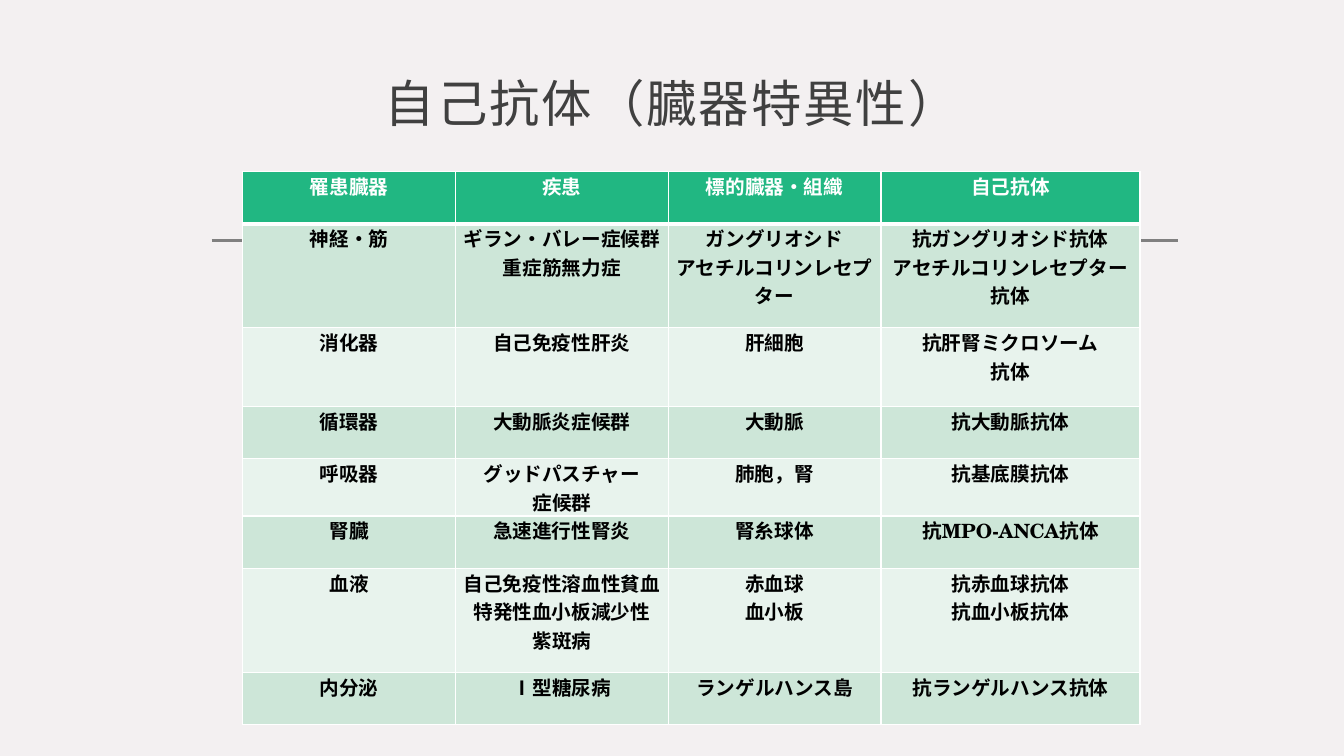
import dataclasses

import lxml.etree
import pptx
import pptx.dml.color
import pptx.enum.shapes
import pptx.enum.text
import pptx.oxml.ns
import pptx.util

Cm = pptx.util.Cm
Pt = pptx.util.Pt
qn = pptx.oxml.ns.qn


@dataclasses.dataclass(frozen=True)
class Theme:
    """Colours, fonts and type sizes of the slide."""
    background: str = "F3F0F1"
    rule: str = "808080"
    title: str = "404040"
    header: str = "21B782"
    bands: tuple = ("CDE6D8", "E8F3ED")
    white: str = "FFFFFF"
    body: str = "000000"
    japanese: str = "Noto Sans CJK JP"
    latin: str = "TeX Gyre Schola"
    title_size: int = 36
    table_size: int = 14


THEME = Theme()

COLUMN_WIDTHS = (5.36, 5.36, 5.36, 6.53)
ROW_HEIGHTS = (1.32, 2.62, 1.98, 1.32, 1.32, 1.32, 2.62, 1.32)
ANTIBODIES = (
    ("罹患臓器", "疾患", "標的臓器・組織", "自己抗体"),
    ("神経・筋", "ギラン・バレー症候群\n重症筋無力症",
     "ガングリオシド\nアセチルコリンレセプター",
     "抗ガングリオシド抗体\nアセチルコリンレセプター抗体"),
    ("消化器", "自己免疫性肝炎", "肝細胞", "抗肝腎ミクロソーム\n抗体"),
    ("循環器", "大動脈炎症候群", "大動脈", "抗大動脈抗体"),
    ("呼吸器", "グッドパスチャー\n症候群", "肺胞，腎", "抗基底膜抗体"),
    ("腎臓", "急速進行性腎炎", "腎糸球体", "抗MPO-ANCA抗体"),
    ("血液", "自己免疫性溶血性貧血\n特発性血小板減少性\n紫斑病",
     "赤血球\n血小板", "抗赤血球抗体\n抗血小板抗体"),
    ("内分泌", "Ⅰ型糖尿病", "ランゲルハンス島", "抗ランゲルハンス抗体"),
)


def rgb(value):
    """Return a colour from its hex digits."""
    return pptx.dml.color.RGBColor.from_string(value)


def style_paragraph(paragraph, latin, size, color, bold=False, spacing=0):
    """Set the font of a whole paragraph, East Asian face included."""
    font = paragraph.font
    font.name, font.size, font.bold = latin, Pt(size), bold
    font.color.rgb = rgb(color)
    properties = paragraph._p.pPr.find(qn("a:defRPr"))
    properties.set("spc", str(spacing))
    east_asian = lxml.etree.Element(qn("a:ea"), typeface=THEME.japanese)
    properties.find(qn("a:latin")).addnext(east_asian)


def add_title(slide, left, top, width, height):
    """Place the heading in the title placeholder."""
    heading = slide.shapes.title
    heading.left, heading.top = Cm(left), Cm(top)
    heading.width, heading.height = Cm(width), Cm(height)
    frame = heading.text_frame
    frame.text = "自己抗体（臓器特異性）"
    frame.word_wrap = True
    frame.auto_size = pptx.enum.text.MSO_AUTO_SIZE.NONE
    frame.vertical_anchor = pptx.enum.text.MSO_ANCHOR.BOTTOM
    frame.margin_left = frame.margin_right = frame.margin_top = Cm(0.3)
    frame.margin_bottom = Cm(0.25)
    line = frame.paragraphs[0]
    line.alignment = pptx.enum.text.PP_ALIGN.LEFT
    line.line_spacing = 1.1
    style_paragraph(line, THEME.japanese, THEME.title_size, THEME.title, spacing=140)


def add_rule(slide, left, top, width):
    """Draw the horizontal rule that runs behind the table."""
    rule = slide.shapes.add_connector(
        pptx.enum.shapes.MSO_CONNECTOR.STRAIGHT,
        Cm(left), Cm(top), Cm(left + width), Cm(top))
    rule.line.color.rgb = rgb(THEME.rule)
    rule.line.width = Pt(2)
    lxml.etree.SubElement(rule._element.spPr, qn("a:effectLst"))


def add_borders(cell, top, bottom):
    """Give a cell white borders, with top and bottom widths in points."""
    properties = cell._tc.get_or_add_tcPr()
    for side, points in (("L", 1), ("R", 1), ("T", top), ("B", bottom)):
        border = lxml.etree.SubElement(properties, qn(f"a:ln{side}"), w=str(Pt(points)))
        fill = lxml.etree.SubElement(border, qn("a:solidFill"))
        lxml.etree.SubElement(fill, qn("a:srgbClr"), val=THEME.white)


def fill_cell(cell, text, row):
    """Write and format one cell according to its row."""
    is_header = row == 0
    add_borders(cell, 3 if row == 1 else 1, 3 if is_header else 1)
    cell.fill.solid()
    cell.fill.fore_color.rgb = rgb(THEME.header if is_header else THEME.bands[(row - 1) % 2])
    cell.margin_left = cell.margin_right = Cm(0.18)
    cell.margin_top = cell.margin_bottom = 0
    cell.text = text
    for paragraph in cell.text_frame.paragraphs:
        paragraph.alignment = pptx.enum.text.PP_ALIGN.CENTER
        style_paragraph(paragraph, THEME.latin, THEME.table_size,
                        THEME.white if is_header else THEME.body, bold=True)


def add_antibody_table(slide, left, top):
    """Build the table of organs, diseases, targets and autoantibodies."""
    table = slide.shapes.add_table(
        len(ROW_HEIGHTS), len(COLUMN_WIDTHS), Cm(left), Cm(top),
        Cm(sum(COLUMN_WIDTHS)), Cm(sum(ROW_HEIGHTS))).table
    for column, width in zip(table.columns, COLUMN_WIDTHS):
        column.width = Cm(width)
    for row, (height, texts) in enumerate(zip(ROW_HEIGHTS, ANTIBODIES)):
        table.rows[row].height = Cm(height)
        for column, text in enumerate(texts):
            fill_cell(table.cell(row, column), text, row)


def main():
    """Build the slide and save it."""
    deck = pptx.Presentation()
    deck.slide_width, deck.slide_height = Cm(33.87), Cm(19.05)
    slide = deck.slides.add_slide(deck.slide_layouts.get_by_name("Title Only"))
    slide.background.fill.solid()
    slide.background.fill.fore_color.rgb = rgb(THEME.background)
    add_rule(slide, 5.33, 6.05, 24.36)
    add_title(slide, 9.4, -0.15, 24.36, 3.73)
    add_antibody_table(slide, 6.12, 4.32)
    deck.save("out.pptx")


if __name__ == "__main__":
    main()
